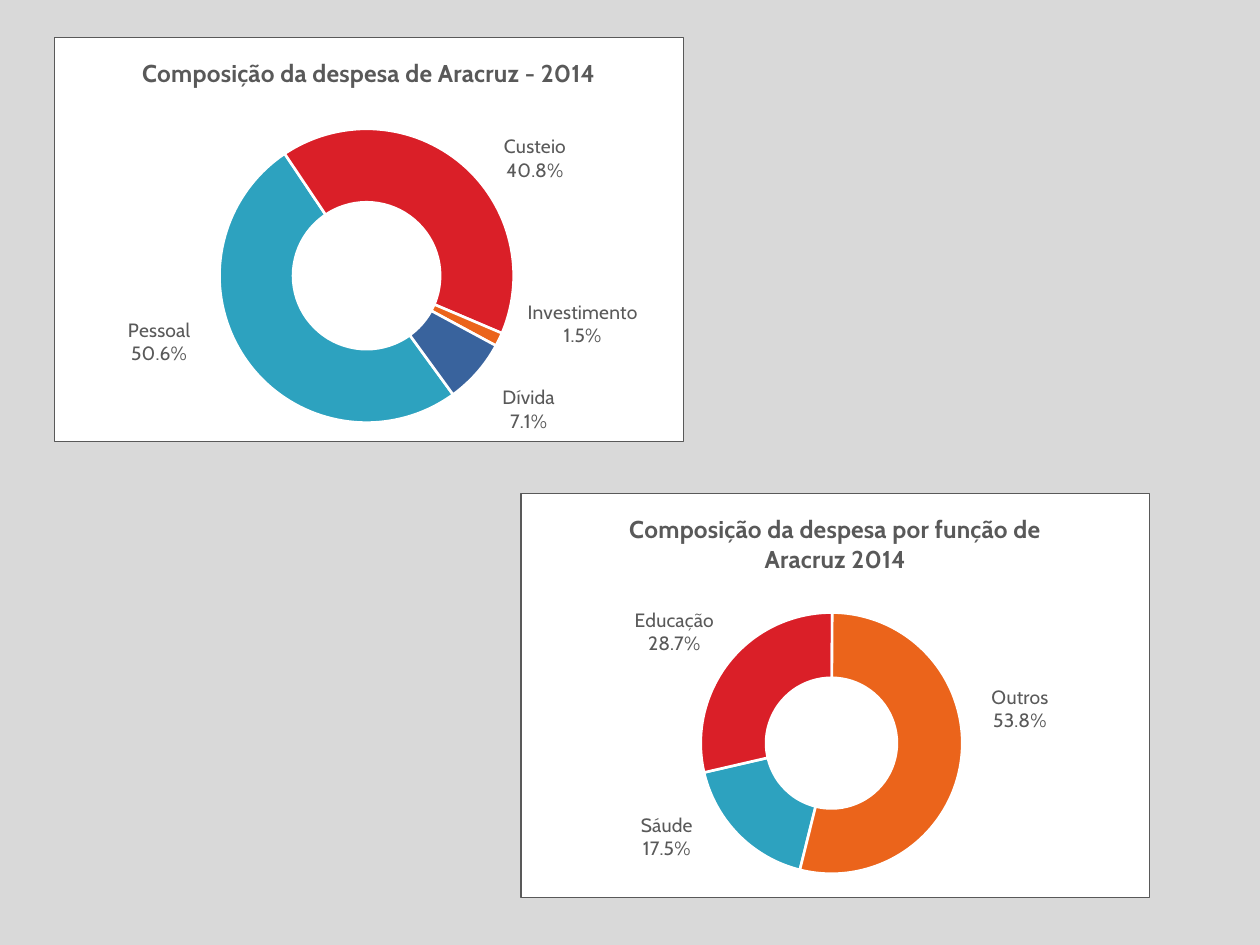
from copy import deepcopy
from math import cos, radians, sin

from pptx import Presentation
from pptx.chart.data import CategoryChartData
from pptx.dml.color import RGBColor
from pptx.enum.chart import XL_CHART_TYPE
from pptx.oxml import parse_xml
from pptx.oxml.ns import nsdecls, qn
from pptx.util import Inches, Pt

DOUGHNUT = XL_CHART_TYPE.DOUGHNUT
FONT = "Cabin"
GRAY = RGBColor(0x59, 0x59, 0x59)
BACKDROP = RGBColor(0xD9, 0xD9, 0xD9)
WHITE = RGBColor(0xFF, 0xFF, 0xFF)
BLACK = RGBColor(0, 0, 0)
TEAL = RGBColor(0x2D, 0xA2, 0xBF)
RED = RGBColor(0xDA, 0x1F, 0x28)
ORANGE = RGBColor(0xEB, 0x64, 0x1B)
BLUE = RGBColor(0x39, 0x63, 0x9D)

# Content: each slice is name, percent, colour, label centre (inches on slide)
CHART_W, CHART_H = 5, 3.22
CHARTS = [
    dict(title="Composição da despesa de Aracruz - 2014",
         at=(0.43, 0.29), center=(2.91, 2.19), radius=1.17, start=144,
         slices=[("Pessoal", 50.6, TEAL, (1.26, 2.72)),
                 ("Custeio", 40.8, RED, (4.25, 1.26)),
                 ("Investimento", 1.5, ORANGE, (4.63, 2.58)),
                 ("Dívida", 7.1, BLUE, (4.20, 3.26))]),
    dict(title="Composição da despesa por função de Aracruz 2014",
         at=(4.13, 3.91), center=(6.60, 5.90), radius=1.04, start=194,
         slices=[("Sáude", 17.5, TEAL, (5.29, 6.65)),
                 ("Educação", 28.7, RED, (5.35, 5.02)),
                 ("Outros", 53.8, ORANGE, (8.10, 5.63))]),
]
RING_MIDDLE = 0.75  # mid-ring radius as a share of the outer radius


def format_font(font, size, color, bold=False):
    font.name, font.size, font.bold = FONT, Pt(size), bold
    font.color.rgb = color


def set_title(chart, text, **fmt):
    chart.has_title = True
    p = chart.chart_title.text_frame.paragraphs[0]
    r = p.add_run()
    r.text = text
    format_font(r.font, **fmt)


def layout(**parts):
    """Manual layout; arguments are c:manualLayout children in schema order."""
    body = "".join(f'<c:{k} val="{v}"/>' for k, v in parts.items())
    return parse_xml(f'<c:layout {nsdecls("c")}><c:manualLayout>{body}'
                     '</c:manualLayout></c:layout>')


def place_ring(chart, spec):
    (left, top), (cx, cy), radius = spec["at"], spec["center"], spec["radius"]
    area = chart.plots[0]._element.getparent()
    for old in area.findall(qn("c:layout")):
        area.remove(old)
    area.insert(0, layout(
        layoutTarget="inner", xMode="edge", yMode="edge",
        x=round((cx - radius - left) / CHART_W, 4),
        y=round((cy - radius - top) / CHART_H, 4),
        w=round(2 * radius / CHART_W, 4), h=round(2 * radius / CHART_H, 4)))
    ring = chart.plots[0]._element
    ring.find(qn("c:firstSliceAng")).set("val", str(spec["start"]))
    ring.find(qn("c:holeSize")).set("val", "60")


def label_slices(series, spec):
    labels = series.data_labels
    labels.show_value = False
    labels.show_category_name = labels.show_percentage = True
    labels.number_format, labels.number_format_is_linked = "0.0%", False
    format_font(labels.font, 11, GRAY)
    common = series._element.find(qn("c:dLbls"))
    for old in common.findall(qn("c:showLeaderLines")):
        common.remove(old)
    common.append(parse_xml(f'<c:separator {nsdecls("c")}>\n</c:separator>'))
    shared = list(common)

    # Move each label from the middle of its slice to its own place
    angle = spec["start"]
    for i, (_, value, _, (x, y)) in enumerate(spec["slices"]):
        mid = radians(angle + value * 1.8)
        angle += value * 3.6
        reach = spec["radius"] * RING_MIDDLE
        dx = x - (spec["center"][0] + reach * sin(mid))
        dy = y - (spec["center"][1] - reach * cos(mid))
        label = parse_xml(f'<c:dLbl {nsdecls("c")}><c:idx val="{i}"/></c:dLbl>')
        label.append(layout(x=round(dx / CHART_W, 4), y=round(dy / CHART_H, 4)))
        for part in shared:
            label.append(deepcopy(part))
        common.insert(i, label)
    common.append(parse_xml(f'<c:showLeaderLines {nsdecls("c")} val="0"/>'))


def add_doughnut(slide, spec):
    data = CategoryChartData()
    data.categories = [s[0] for s in spec["slices"]]
    data.add_series("Series 1", [s[1] for s in spec["slices"]])
    left, top = spec["at"]
    chart = slide.shapes.add_chart(DOUGHNUT, Inches(left), Inches(top),
                                   Inches(CHART_W), Inches(CHART_H), data).chart
    chart.has_legend = False
    format_font(chart.font, 10, BLACK)
    set_title(chart, spec["title"], size=14, color=GRAY, bold=True)
    place_ring(chart, spec)

    # Slice colours
    chart.plots[0].vary_by_categories = True
    series = chart.plots[0].series[0]
    for i, (_, _, color, _) in enumerate(spec["slices"]):
        fmt = series.points[i].format
        fmt.fill.solid()
        fmt.fill.fore_color.rgb = color
        fmt.line.color.rgb = WHITE
        fmt.line.width = Pt(1.5)
    label_slices(series, spec)

    # White panel with a thin border
    panel = parse_xml(
        f'<c:spPr {nsdecls("c", "a")}>'
        f'<a:solidFill><a:srgbClr val="{WHITE}"/></a:solidFill>'
        f'<a:ln w="{Pt(0.75)}"><a:solidFill><a:srgbClr val="{GRAY}"/>'
        '</a:solidFill></a:ln></c:spPr>')
    chart._chartSpace.find(qn("c:chart")).addnext(panel)


def main():
    prs = Presentation()
    prs.slide_width, prs.slide_height = Inches(10), Inches(7.5)
    slide = prs.slides.add_slide(prs.slide_layouts[6])
    slide.background.fill.solid()
    slide.background.fill.fore_color.rgb = BACKDROP
    for spec in CHARTS:
        add_doughnut(slide, spec)
    prs.save("out.pptx")


if __name__ == "__main__":
    main()
